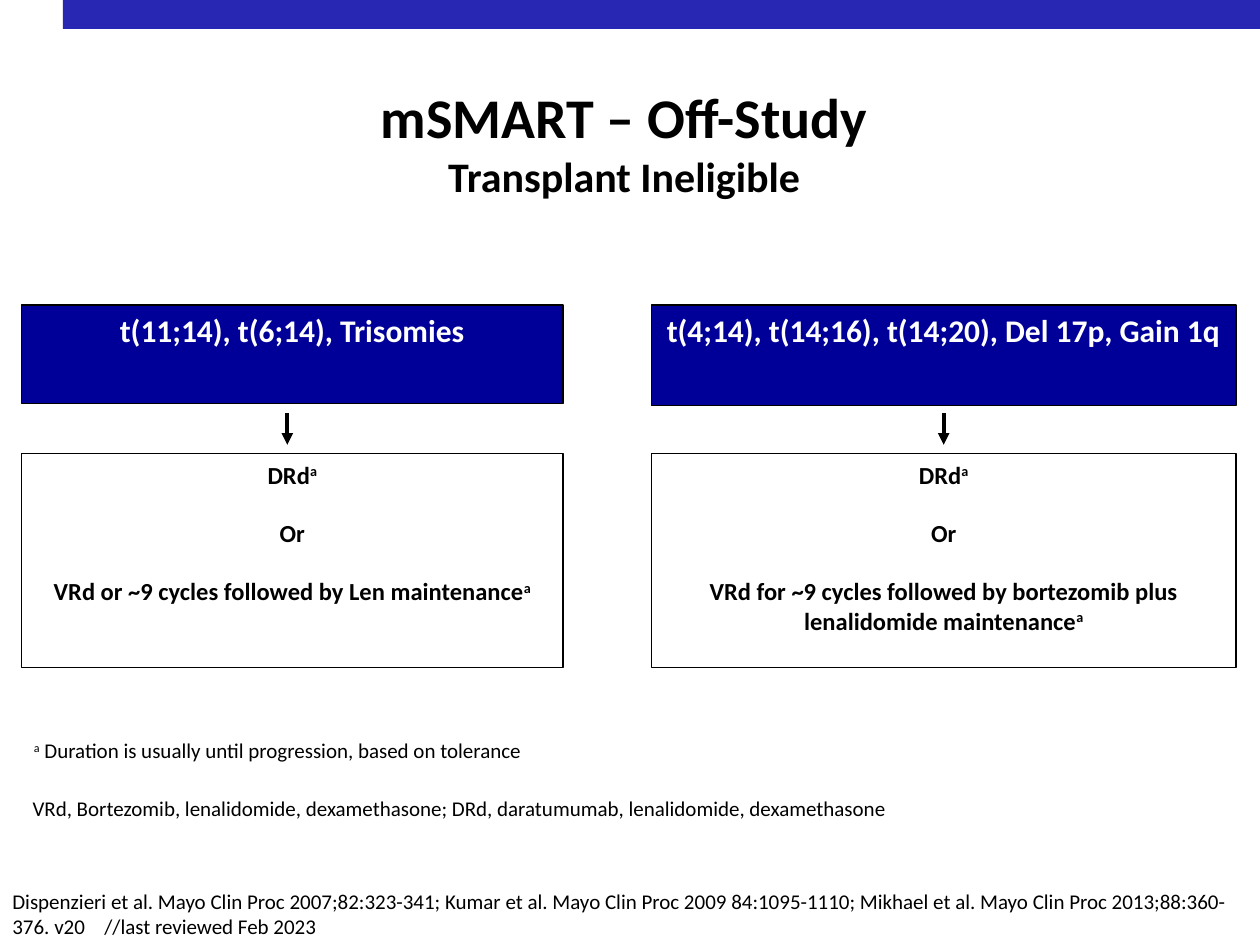
from dataclasses import dataclass

from lxml.etree import SubElement as Sub
from pptx import Presentation
from pptx.dml.color import RGBColor
from pptx.enum.shapes import MSO_CONNECTOR as Conn, MSO_SHAPE as Kind
from pptx.enum.text import MSO_ANCHOR as Anchor, PP_ALIGN as Align
from pptx.oxml.ns import qn
from pptx.util import Inches, Pt

BLACK = RGBColor(0, 0, 0)
WHITE = RGBColor(255, 255, 255)
NAVY = RGBColor(0, 0, 0x99)
BLUE = RGBColor(0x27, 0x27, 0xB3)
FONT = "Calibri"
WIDE, HIGH = 10, 7.5
HEAD, STEP, BODY = 2.42, 3.28, 3.6
TALL = 1.7
MARK = "^"


@dataclass
class Arm:
    left: float
    width: float
    high: float
    mid: float
    risk: str
    plan: str


@dataclass
class Note:
    left: float
    top: float
    width: float
    high: float
    text: str
    lead: float = 1.0


ARMS = [
    Arm(0.17, 4.3, 0.78, 2.28, "t(11;14), t(6;14), Trisomies",
        "VRd or ~9 cycles followed by Len maintenance^a"),
    Arm(5.17, 4.64, 0.8, 7.49, "t(4;14), t(14;16), t(14;20), Del 17p, Gain 1q",
        "VRd for ~9 cycles followed by bortezomib plus lenalidomide maintenance^a"),
]
NOTES = [
    Note(0.17, 5.83, 9.58, 0.48,
         "^a^ Duration is usually until progression, based on tolerance", 0.9),
    Note(0.16, 6.29, 9.58, 0.28,
         "VRd, Bortezomib, lenalidomide, dexamethasone; "
         "DRd, daratumumab, lenalidomide, dexamethasone", 0.9),
    Note(0, 7, WIDE, 0.51,
         "Dispenzieri et al. Mayo Clin Proc 2007;82:323-341; Kumar et al. "
         "Mayo Clin Proc 2009 84:1095-1110; Mikhael et al. "
         "Mayo Clin Proc 2013;88:360-376. v20\t//last reviewed Feb 2023"),
]


def write(para, text: str, size: float, color=BLACK, bold: bool = False) -> None:
    if "\t" in text:
        tabs = Sub(para._p.get_or_add_pPr(), qn("a:tabLst"))
        Sub(tabs, qn("a:tab"), pos=str(Inches(0.73)), algn="l")
    for i, part in enumerate(text.split(MARK)):
        if not part:
            continue
        run = para.add_run()
        run.text = part
        font = run.font
        font.name, font.size, font.bold = FONT, Pt(size), bold
        font.color.rgb = color
        if i % 2:
            run._r.get_or_add_rPr().set("baseline", "30000")


def block(slide, kind, at: tuple, fill=None, edge=None):
    shape = slide.shapes.add_shape(kind, *map(Inches, at))
    shape.shadow.inherit = False
    if fill is None:
        shape.fill.background()
    else:
        shape.fill.solid()
        shape.fill.fore_color.rgb = fill
    if edge is None:
        shape.line.fill.background()
    else:
        shape.line.color.rgb = edge
        shape.line.width = Pt(0.75)
    frame = shape.text_frame
    frame.word_wrap = True
    frame.vertical_anchor = Anchor.TOP
    return frame


def stack(frame, lines: list, size: float, color=BLACK, gap: float = 0) -> None:
    for i, text in enumerate(lines):
        para = frame.add_paragraph() if i else frame.paragraphs[0]
        para.alignment = Align.CENTER
        para.space_before = Pt(gap if i else 0)
        write(para, text, size, color, True)


def arrow(slide, x: float, top: float, end: float) -> None:
    line = slide.shapes.add_connector(
        Conn.STRAIGHT, Inches(x), Inches(top), Inches(x), Inches(end))
    line.line.color.rgb = BLACK
    line.line.width = Pt(2.25)
    Sub(line.line._get_or_add_ln(), qn("a:tailEnd"), type="triangle")
    Sub(line._element.spPr, qn("a:effectLst"))


def draw_arm(slide, arm: Arm) -> None:
    head = block(slide, Kind.RECTANGLE, (arm.left, HEAD, arm.width, arm.high), NAVY, BLACK)
    stack(head, [arm.risk], 18, WHITE)
    arrow(slide, arm.mid, STEP, STEP + 0.25)
    body = block(slide, Kind.RECTANGLE, (arm.left, BODY, arm.width, TALL), WHITE, BLACK)
    stack(body, ["DRd^a", "Or", arm.plan], 14, gap=16.5)


def draw_note(slide, note: Note) -> None:
    at = note.left, note.top, note.width, note.high
    frame = slide.shapes.add_textbox(*map(Inches, at)).text_frame
    frame.word_wrap = True
    para = frame.paragraphs[0]
    para.line_spacing = note.lead
    write(para, note.text, 12)


def draw_title(slide) -> None:
    frame = block(slide, Kind.ROUNDED_RECTANGLE, (2.87, 0.75, 4.17, 0.75))
    frame.word_wrap = False
    frame.vertical_anchor = Anchor.MIDDLE
    frame.margin_left = frame.margin_right = 0
    frame.margin_top = frame.margin_bottom = 0
    stack(frame, ["mSMART – Off-Study"], 32)
    para = frame.add_paragraph()
    para.alignment = Align.CENTER
    write(para, "Transplant Ineligible", 24, bold=True)


def main() -> None:
    deck = Presentation()
    deck.slide_width, deck.slide_height = Inches(WIDE), Inches(HIGH)
    slide = deck.slides.add_slide(deck.slide_layouts[6])
    block(slide, Kind.RECTANGLE, (WIDE * 0.05, 0, WIDE * 0.95, 0.23), BLUE)
    draw_title(slide)
    for arm in ARMS:
        draw_arm(slide, arm)
    for note in NOTES:
        draw_note(slide, note)
    deck.save("out.pptx")


if __name__ == "__main__":
    main()
